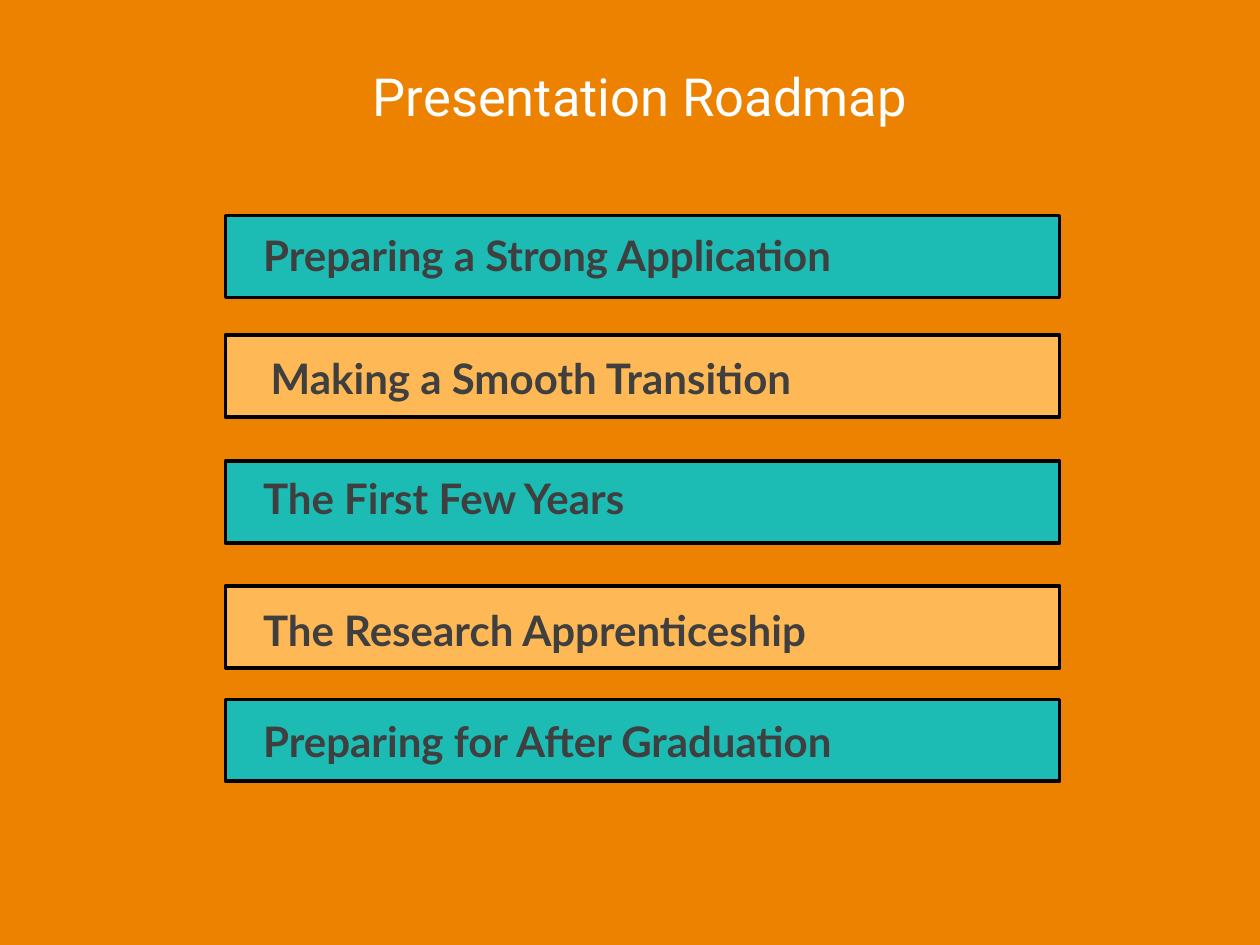
"""Build the Presentation Roadmap slide: a title above five labelled bars."""
from dataclasses import dataclass

from pptx import Presentation
from pptx.dml.color import RGBColor
from pptx.enum.shapes import MSO_SHAPE
from pptx.enum.text import MSO_ANCHOR, PP_ALIGN
from pptx.slide import Slide
from pptx.util import Inches, Pt

ORANGE = RGBColor(0xED, 0x81, 0x00)
TEAL = RGBColor(0x1C, 0xBB, 0xB4)
APRICOT = RGBColor(0xFE, 0xB8, 0x56)
BLACK = RGBColor(0x00, 0x00, 0x00)
CHARCOAL = RGBColor(0x3F, 0x3F, 0x3F)
WHITE = RGBColor(0xFF, 0xFF, 0xFF)


@dataclass(frozen=True)
class TextStyle:
    font: str
    size: float
    color: RGBColor
    bold: bool = False
    align: PP_ALIGN = PP_ALIGN.LEFT
    vertical_inset: float = 0.05


@dataclass(frozen=True)
class Stage:
    label: str
    bar_top: float
    label_top: float
    fill: RGBColor
    label_left: float = 1.99
    label_width: float = 5.96
    label_height: float = 0.34
    anchor: MSO_ANCHOR = MSO_ANCHOR.TOP


TITLE_STYLE = TextStyle("Roboto", 30, WHITE, align=PP_ALIGN.CENTER, vertical_inset=0.1)
LABEL_STYLE = TextStyle("Lato", 24, CHARCOAL, bold=True)

STAGES = [
    Stage("Preparing a Strong Application", 1.71, 1.85, TEAL, anchor=MSO_ANCHOR.MIDDLE),
    Stage("Making a Smooth Transition", 2.66, 2.75, APRICOT, 2.05, 6.01, 0.48),
    Stage("The First Few Years", 3.66, 3.7, TEAL),
    Stage("The Research Apprenticeship", 4.65, 4.75, APRICOT),
    Stage("Preparing for After Graduation", 5.55, 5.63, TEAL),
]


def add_text(page: Slide, text: str, left: float, top: float, width: float,
             height: float, style: TextStyle, anchor: MSO_ANCHOR) -> None:
    box = page.shapes.add_textbox(Inches(left), Inches(top), Inches(width), Inches(height))
    frame = box.text_frame
    frame.word_wrap = True
    frame.vertical_anchor = anchor
    frame.margin_top = frame.margin_bottom = Inches(style.vertical_inset)
    para = frame.paragraphs[0]
    para.alignment = style.align
    span = para.add_run()
    span.text = text
    span.font.name = style.font
    span.font.size = Pt(style.size)
    span.font.bold = style.bold
    span.font.color.rgb = style.color


def add_bar(page: Slide, top: float, fill: RGBColor) -> None:
    bar = page.shapes.add_shape(
        MSO_SHAPE.RECTANGLE, Inches(1.79), Inches(top), Inches(6.62), Inches(0.65))
    bar.shadow.inherit = False
    bar.fill.solid()
    bar.fill.fore_color.rgb = fill
    bar.line.color.rgb = BLACK
    bar.line.width = Pt(2)


def add_stage(page: Slide, stage: Stage) -> None:
    add_bar(page, stage.bar_top, stage.fill)
    add_text(page, stage.label, stage.label_left, stage.label_top,
             stage.label_width, stage.label_height, LABEL_STYLE, stage.anchor)


def main() -> None:
    deck = Presentation()
    deck.slide_width, deck.slide_height = Inches(10), Inches(7.5)
    page = deck.slides.add_slide(deck.slide_layouts[6])
    page.background.fill.solid()
    page.background.fill.fore_color.rgb = ORANGE
    for stage in STAGES:
        add_stage(page, stage)
    add_text(page, "Presentation Roadmap", 0.08, 0.24, 10, 1.03,
             TITLE_STYLE, MSO_ANCHOR.MIDDLE)
    deck.save("out.pptx")


if __name__ == "__main__":
    main()
